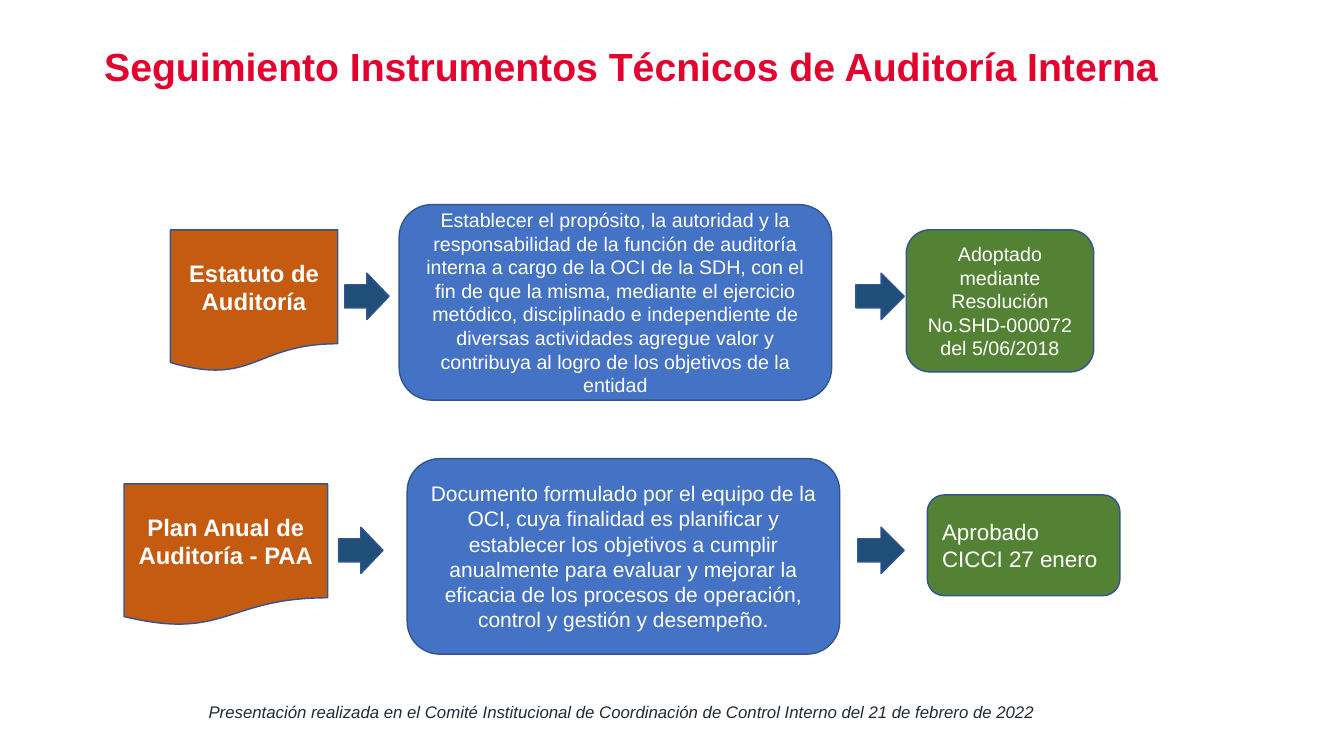
from dataclasses import dataclass

from pptx import Presentation
from pptx.dml.color import RGBColor
from pptx.enum.shapes import MSO_SHAPE
from pptx.enum.text import MSO_ANCHOR, MSO_AUTO_SIZE, PP_ALIGN
from pptx.util import Inches, Pt

SLIDE_WIDTH = Inches(13.33)
SLIDE_HEIGHT = Inches(7.5)


@dataclass(frozen=True)
class Theme:
    font: str = "Arial"
    title: str = "E3022E"
    footer: str = "222A35"
    light: str = "FFFFFF"
    outline: str = "325491"
    document: str = "C55A11"
    purpose: str = "4472C4"
    outcome: str = "548235"
    arrow: str = "1F4E79"
    title_size: int = 28
    document_size: int = 17
    footer_size: int = 12


THEME = Theme()


# Positions are percentages of the slide's width and height
def across(share):
    return round(SLIDE_WIDTH * share / 100)


def down(share):
    return round(SLIDE_HEIGHT * share / 100)


def write(shape, text, size, color, align, anchor=MSO_ANCHOR.MIDDLE,
          bold=False, italic=False):
    frame = shape.text_frame
    frame.word_wrap = True
    frame.vertical_anchor = anchor
    para = frame.paragraphs[0]
    para.text = text
    para.alignment = align
    font = para.font
    font.name = THEME.font
    font.size = Pt(size)
    font.bold = bold
    font.italic = italic
    font.color.rgb = RGBColor.from_string(color)


def add_block(page, kind, fill, left, middle, width, height):
    """Add a filled preset shape centred vertically on middle."""
    shape = page.shapes.add_shape(kind, across(left), down(middle - height / 2),
                                  across(width), down(height))
    shape.shadow.inherit = False
    shape.fill.solid()
    shape.fill.fore_color.rgb = RGBColor.from_string(fill)
    shape.line.color.rgb = RGBColor.from_string(THEME.outline)
    shape.line.width = Pt(1)
    return shape


def add_document(page, text, left, middle, width):
    block = add_block(page, MSO_SHAPE.FLOWCHART_DOCUMENT, THEME.document,
                      left, middle, width, 18.8)
    write(block, text, THEME.document_size, THEME.light, PP_ALIGN.CENTER, bold=True)


def add_arrow(page, left, middle, width):
    add_block(page, MSO_SHAPE.RIGHT_ARROW, THEME.arrow, left, middle - 0.6, width, 6.13)


def add_purpose(page, text, left, middle, size):
    block = add_block(page, MSO_SHAPE.ROUNDED_RECTANGLE, THEME.purpose,
                      left, middle + 0.2, 32.18, 25.87)
    write(block, text, size, THEME.light, PP_ALIGN.CENTER)


def add_outcome(page, text, left, middle, width, height, size, align):
    block = add_block(page, MSO_SHAPE.ROUNDED_RECTANGLE, THEME.outcome,
                      left, middle, width, height)
    write(block, text, size, THEME.light, align)


def set_title(page, text):
    title = page.shapes.title
    title.left, title.top = across(2.4), down(4.93)
    title.width, title.height = across(89.1), down(7.6)
    title.text_frame.auto_size = MSO_AUTO_SIZE.NONE
    write(title, text, THEME.title_size, THEME.title, PP_ALIGN.CENTER,
          MSO_ANCHOR.TOP, bold=True)


def add_footer(page, text):
    box = page.shapes.add_textbox(across(14.78), down(92.13), across(76.6), down(4))
    write(box, text, THEME.footer_size, THEME.footer, PP_ALIGN.LEFT,
          MSO_ANCHOR.TOP, italic=True)


def main():
    deck = Presentation()
    deck.slide_width, deck.slide_height = SLIDE_WIDTH, SLIDE_HEIGHT
    page = deck.slides.add_slide(deck.slide_layouts.get_by_name("Title Only"))
    set_title(page, "Seguimiento Instrumentos Técnicos de Auditoría Interna")

    # Audit charter row
    charter = 39.8
    add_document(page, "Estatuto de Auditoría", 12.68, charter, 12.45)
    add_arrow(page, 25.65, charter, 3.3)
    add_purpose(
        page,
        "Establecer el propósito, la autoridad y la responsabilidad de la función "
        "de auditoría interna a cargo de la OCI de la SDH, con el fin de que la "
        "misma, mediante el ejercicio metódico, disciplinado e independiente de "
        "diversas actividades agregue valor y contribuya al logro de los objetivos "
        "de la entidad",
        29.7, charter, 14)
    add_arrow(page, 63.68, charter, 3.6)
    add_outcome(page, "Adoptado mediante Resolución No.SHD-000072 del 5/06/2018",
                67.43, charter, 13.95, 18.8, 14, PP_ALIGN.CENTER)

    # Annual plan row
    plan = 73.4
    add_document(page, "Plan Anual de Auditoría - PAA", 9.23, plan, 15.15)
    add_arrow(page, 25.2, plan, 3.3)
    add_purpose(
        page,
        "Documento formulado por el equipo de la OCI, cuya finalidad es planificar "
        "y establecer los objetivos a cumplir anualmente para evaluar y mejorar la "
        "eficacia de los procesos de operación, control y gestión y desempeño.",
        30.3, plan, 15)
    add_arrow(page, 63.83, plan, 3.45)
    add_outcome(page, "Aprobado CICCI 27 enero",
                69, plan - 1.27, 14.33, 13.33, 16, PP_ALIGN.LEFT)

    add_footer(page, "Presentación realizada en el Comité Institucional de "
                     "Coordinación de Control Interno del 21 de febrero de 2022")
    deck.save("out.pptx")


if __name__ == "__main__":
    main()
